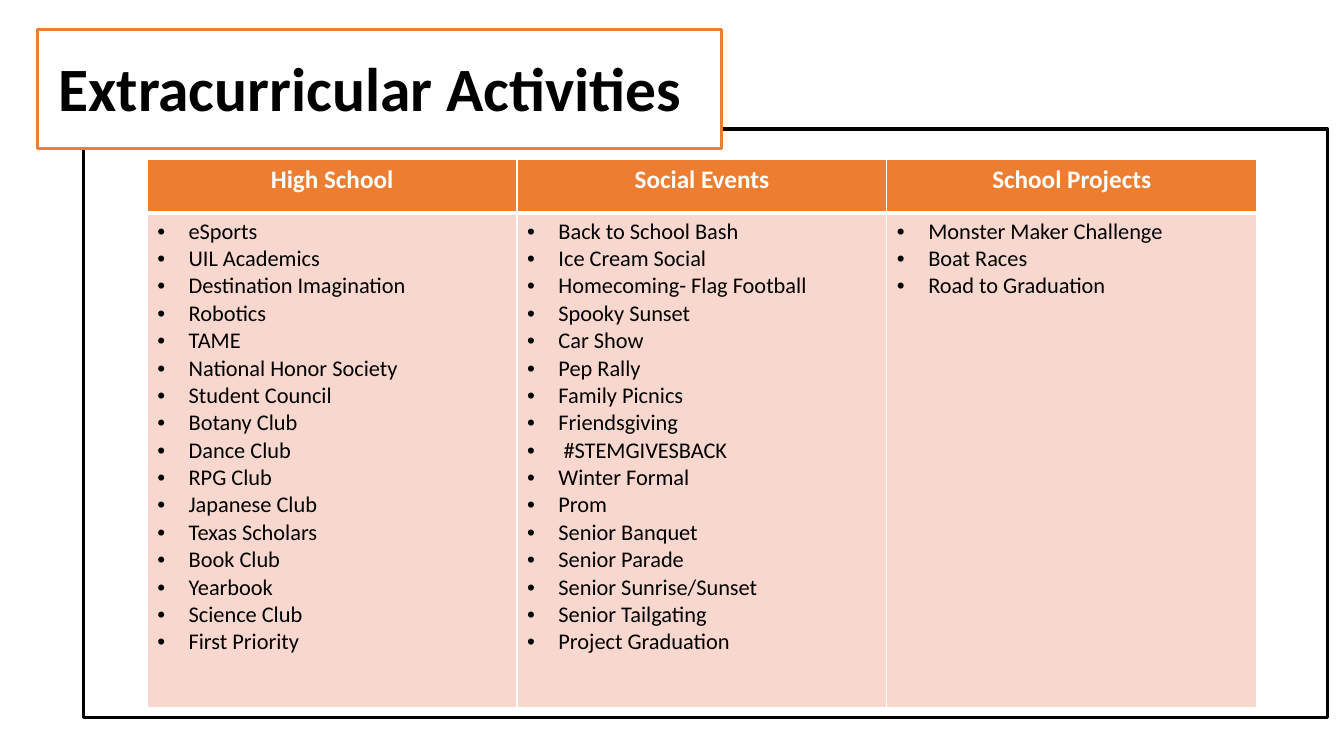
from lxml import etree
from pptx import Presentation
from pptx import util as u
from pptx.dml.color import RGBColor
from pptx.enum import shapes, text
from pptx.oxml import ns

COLOURS = {"black": "000000", "white": "FFFFFF", "orange": "ED7D31", "blush": "F8D7CE"}

ACTIVITIES = {
    "High School": [
        "eSports", "UIL Academics", "Destination Imagination", "Robotics", "TAME",
        "National Honor Society", "Student Council", "Botany Club", "Dance Club",
        "RPG Club", "Japanese Club", "Texas Scholars", "Book Club", "Yearbook",
        "Science Club", "First Priority",
    ],
    "Social Events": [
        "Back to School Bash", "Ice Cream Social", "Homecoming- Flag Football",
        "Spooky Sunset", "Car Show", "Pep Rally", "Family Picnics", "Friendsgiving",
        " #STEMGIVESBACK", "Winter Formal", "Prom", "Senior Banquet", "Senior Parade",
        "Senior Sunrise/Sunset", "Senior Tailgating", "Project Graduation",
    ],
    "School Projects": ["Monster Maker Challenge", "Boat Races", "Road to Graduation"],
}


def colour(name):
    return RGBColor.from_string(COLOURS[name])


class Slide:
    font = "Calibri"

    def __init__(self, deck):
        self.page = deck.slides.add_slide(deck.slide_layouts[5])

    def style(self, paragraph, size, shade, bold=False):
        for span in paragraph.runs:
            span.font.name = self.font
            span.font.size = u.Pt(size)
            span.font.bold = bold
            span.font.color.rgb = colour(shade)

    def frame(self, left, top, width, height, line, fill=None):
        box = self.page.shapes.add_shape(
            shapes.MSO_SHAPE.RECTANGLE, u.Cm(left), u.Cm(top), u.Cm(width), u.Cm(height))
        box.shadow.inherit = False
        box.line.color.rgb = colour(line)
        box.line.width = u.Pt(2.25)
        if fill:
            box.fill.solid()
            box.fill.fore_color.rgb = colour(fill)
        else:
            box.fill.background()

    def title(self, wording, left, top, width, height):
        box = self.page.shapes.title
        self.page.shapes._spTree.append(box._element)
        box.left, box.top, box.width, box.height = map(u.Cm, (left, top, width, height))
        box.text_frame.text = wording
        box.text_frame.word_wrap = True
        box.text_frame.vertical_anchor = text.MSO_ANCHOR.MIDDLE
        paragraph = box.text_frame.paragraphs[0]
        paragraph.alignment = text.PP_ALIGN.LEFT
        paragraph.line_spacing = 0.9
        self.style(paragraph, 44, "black", True)

    def borders(self, cell, **widths):
        properties = cell._tc.get_or_add_tcPr()
        for side in ("L", "R", "T", "B"):
            line = etree.SubElement(properties, ns.qn(f"a:ln{side}"),
                                    w=str(u.Pt(widths.get(side, 1))))
            fill = etree.SubElement(line, ns.qn("a:solidFill"))
            etree.SubElement(fill, ns.qn("a:srgbClr"), val=COLOURS["white"])

    def cell(self, cell, wording, fill, **widths):
        self.borders(cell, **widths)
        cell.fill.solid()
        cell.fill.fore_color.rgb = colour(fill)
        cell.text_frame.text = wording
        return cell.text_frame.paragraphs

    def bullet(self, paragraph):
        properties = paragraph._p.get_or_add_pPr()
        indent = u.Cm(0.79)
        properties.set("marL", str(indent))
        properties.set("indent", str(-indent))
        etree.SubElement(properties, ns.qn("a:buFont"), typeface="Arial")
        etree.SubElement(properties, ns.qn("a:buChar"), char="•")

    def table(self, columns, left, top, column_width, row_heights):
        table = self.page.shapes.add_table(
            2, len(columns), u.Cm(left), u.Cm(top),
            u.Cm(column_width * len(columns)), u.Cm(sum(row_heights))).table
        for row, height in zip(table.rows, row_heights):
            row.height = u.Cm(height)
        for index, (heading, items) in enumerate(columns.items()):
            table.columns[index].width = u.Cm(column_width)
            for paragraph in self.cell(table.cell(0, index), heading, "orange", B=3):
                paragraph.alignment = text.PP_ALIGN.CENTER
                self.style(paragraph, 18, "white", True)
            for paragraph in self.cell(table.cell(1, index), "\n".join(items), "blush", T=3):
                self.bullet(paragraph)
                self.style(paragraph, 16, "black")


def main():
    deck = Presentation()
    deck.slide_width, deck.slide_height = u.Cm(33.87), u.Cm(19.05)
    slide = Slide(deck)
    slide.frame(2.11, 3.25, 31.34, 14.83, "black")
    slide.frame(0.94, 0.74, 17.25, 3, "orange", "white")
    slide.title("Extracurricular Activities", 1.22, 0.46, 29.21, 3.68)
    slide.table(ACTIVITIES, 3.71, 4.01, 9.32, (1.35, 12.47))
    deck.save("out.pptx")


if __name__ == "__main__":
    main()
